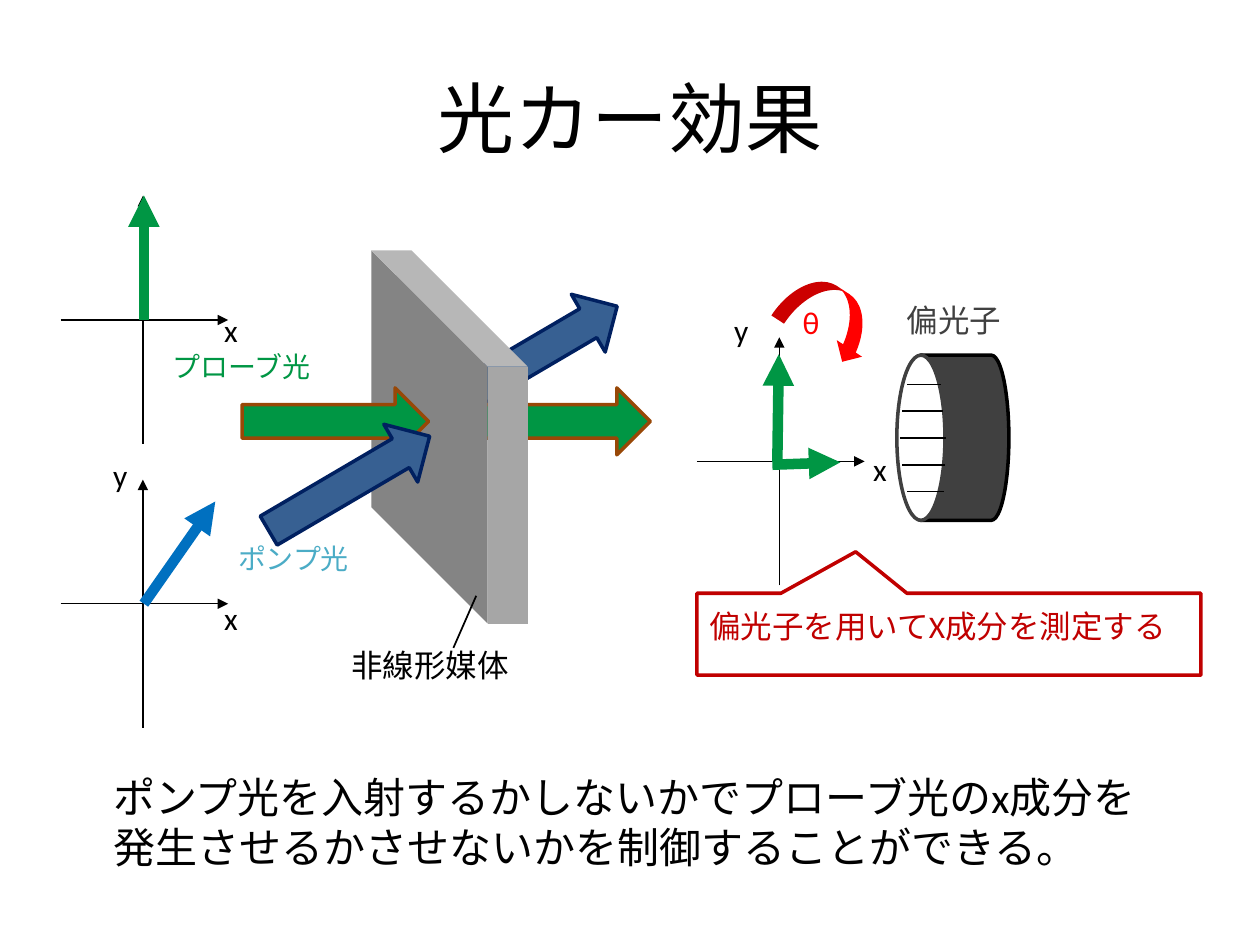
import pptx
import pptx.util
import pptx.dml.color
import pptx.enum.shapes
import pptx.enum.text
import pptx.oxml
import pptx.oxml.ns

Cm = pptx.util.Cm
Pt = pptx.util.Pt
KIND = pptx.enum.shapes.MSO_SHAPE
ALIGN = pptx.enum.text.PP_ALIGN
ANCHOR = pptx.enum.text.MSO_ANCHOR

HUES = {
    "black": "000000", "white": "FFFFFF", "probe": "009644",
    "edge": "984807", "pump": "376092", "navy": "002060",
    "aqua": "4BACC6", "blue": "0070C0", "gray": "A6A6A6",
    "dark": "404040", "note": "C00000", "red": "FF0000",
}


def hue(name):
    return pptx.dml.color.RGBColor.from_string(HUES[name])


def write(frame, text, size=18, color="black", align=ALIGN.LEFT,
          anchor=ANCHOR.TOP, wrap=True):
    frame.word_wrap = wrap
    frame.vertical_anchor = anchor
    para = frame.paragraphs[0]
    para.alignment = align
    run = para.add_run()
    run.text = text
    run.font.size = Pt(size)
    run.font.name = "Calibri"
    run.font.color.rgb = hue(color)


def label(slide, box, text, **style):
    area = slide.shapes.add_textbox(*map(Cm, box))
    write(area.text_frame, text, **style)


def solid(slide, kind, box, fill=None, edge=None, turn=0, flip=False, adjs=()):
    """Add a preset shape; without fill or edge that part stays empty."""
    shape = slide.shapes.add_shape(kind, *map(Cm, box))
    shape.shadow.inherit = False
    shape.rotation = turn
    if fill:
        shape.fill.solid()
        shape.fill.fore_color.rgb = hue(fill)
    else:
        shape.fill.background()
    if edge:
        shape.line.color.rgb = hue(edge)
        shape.line.width = Pt(2)
    else:
        shape.line.fill.background()
    if flip:
        shape.element.spPr.find(pptx.oxml.ns.qn("a:xfrm")).set("flipH", "1")
    for i, adj in enumerate(adjs):
        shape.adjustments[i] = adj


def stroke(slide, start, end, color="black", width=1, head=False):
    line = slide.shapes.add_connector(
        pptx.enum.shapes.MSO_CONNECTOR.STRAIGHT, *map(Cm, start + end))
    line.line.color.rgb = hue(color)
    line.line.width = Pt(width)
    props = line.element.spPr
    space = pptx.oxml.ns.nsdecls("a")
    if head:
        props.find(pptx.oxml.ns.qn("a:ln")).append(
            pptx.oxml.parse_xml(f'<a:tailEnd {space} type="triangle"/>'))
    props.append(pptx.oxml.parse_xml(f"<a:effectLst {space}/>"))


def beam(slide, left, top, fill, edge, turn=0):
    solid(slide, KIND.RIGHT_ARROW, (left, top, 3.76, 1.35), fill, edge, turn)


def axes(slide, left, mid):
    """Draw a horizontal axis at height mid and the vertical one across it."""
    cross = left + 1.66
    stroke(slide, (left, mid), (left + 3.38, mid), width=0.75, head=True)
    stroke(slide, (cross, mid + 2.5), (cross, mid - 2.5), width=0.75, head=True)


def sample(slide):
    """Draw the medium with the beams behind and in front of it."""
    beam(slide, 8.94, 6.45, "pump", "navy", 329.6)
    beam(slide, 9.35, 7.82, "probe", "edge")
    solid(slide, KIND.CUBE, (7.49, 5.05, 3.15, 7.52), "gray",
          flip=True, adjs=[0.744])
    label(slide, (6.83, 12.9, 7.29, 1.02), "非線形媒体")
    stroke(slide, (9.6, 12.01), (9.14, 13.06))
    beam(slide, 4.88, 7.82, "probe", "edge")
    beam(slide, 5.16, 9.07, "pump", "navy", 329.6)


def graphs(slide):
    for left, mid in ((1.22, 6.45), (1.22, 12.17), (14.05, 9.3)):
        axes(slide, left, mid)
    label(slide, (3.23, 6.93, 4.11, 0.94), "プローブ光", size=16, color="probe")
    label(slide, (4.55, 10.8, 4.62, 0.94), "ポンプ光", size=16, color="aqua")
    for start, end, color in (
            ((2.9, 6.45), (2.9, 3.94), "probe"),
            ((2.9, 12.17), (4.34, 10.11), "blue"),
            ((15.67, 9.3), (15.7, 7.14), "probe"),
            ((15.57, 9.37), (16.94, 9.32), "probe")):
        stroke(slide, start, end, color, 6, head=True)
    for text, left, top in (("x", 17.35, 8.94), ("x", 4.27, 11.96),
                            ("x", 4.27, 6.15), ("y", 14.55, 6.15),
                            ("y", 2.03, 9.07)):
        label(slide, (left, top, 0.9, 1.27), text, wrap=False)


def filter_part(slide):
    """Draw the polarizer, its note and the turning angle."""
    label(slide, (14.05, 12.12, 10.16, 1.02),
          "偏光子を用いてX成分を測定する", color="note")
    solid(slide, KIND.FLOWCHART_DIRECT_ACCESS_STORAGE,
          (18.21, 7.16, 2.13, 3.33), "dark", "black", flip=True)
    solid(slide, KIND.OVAL, (18.08, 7.16, 0.97, 3.33), "white", "dark")
    slits = ((18.29, 18.97), (18.19, 19), (18.14, 19.08),
             (18.19, 19.05), (18.29, 19.02))
    for i, (left, right) in enumerate(slits):
        top = 7.75 + 0.54 * i
        stroke(slide, (left, top), (right, top))
    solid(slide, KIND.RECTANGULAR_CALLOUT, (14.05, 11.96, 10.16, 1.65),
          edge="note", adjs=[-0.185, -1.007])
    label(slide, (18.03, 5.94, 3.18, 1.02), "偏光子", color="dark")
    solid(slide, KIND.CURVED_DOWN_ARROW, (15.72, 5.79, 2.01, 1.22),
          "red", turn=33.2)
    label(slide, (15.93, 5.99, 1.19, 1.27), "θ", color="red")


def main():
    deck = pptx.Presentation()
    deck.slide_width, deck.slide_height = Cm(25.4), Cm(19.05)
    slide = deck.slides.add_slide(deck.slide_layouts[5])
    title = slide.shapes.title
    title.left, title.top, title.width, title.height = map(
        Cm, (1.27, 0.76, 22.86, 3.18))
    write(title.text_frame, "光カー効果", size=44,
          align=ALIGN.CENTER, anchor=ANCHOR.MIDDLE)
    sample(slide)
    graphs(slide)
    filter_part(slide)
    label(slide, (2.03, 15.42, 21.54, 2.31),
          "ポンプ光を入射するかしないかでプローブ光のx成分を"
          "発生させるかさせないかを制御することができる。", size=24)
    deck.save("out.pptx")


if __name__ == "__main__":
    main()
